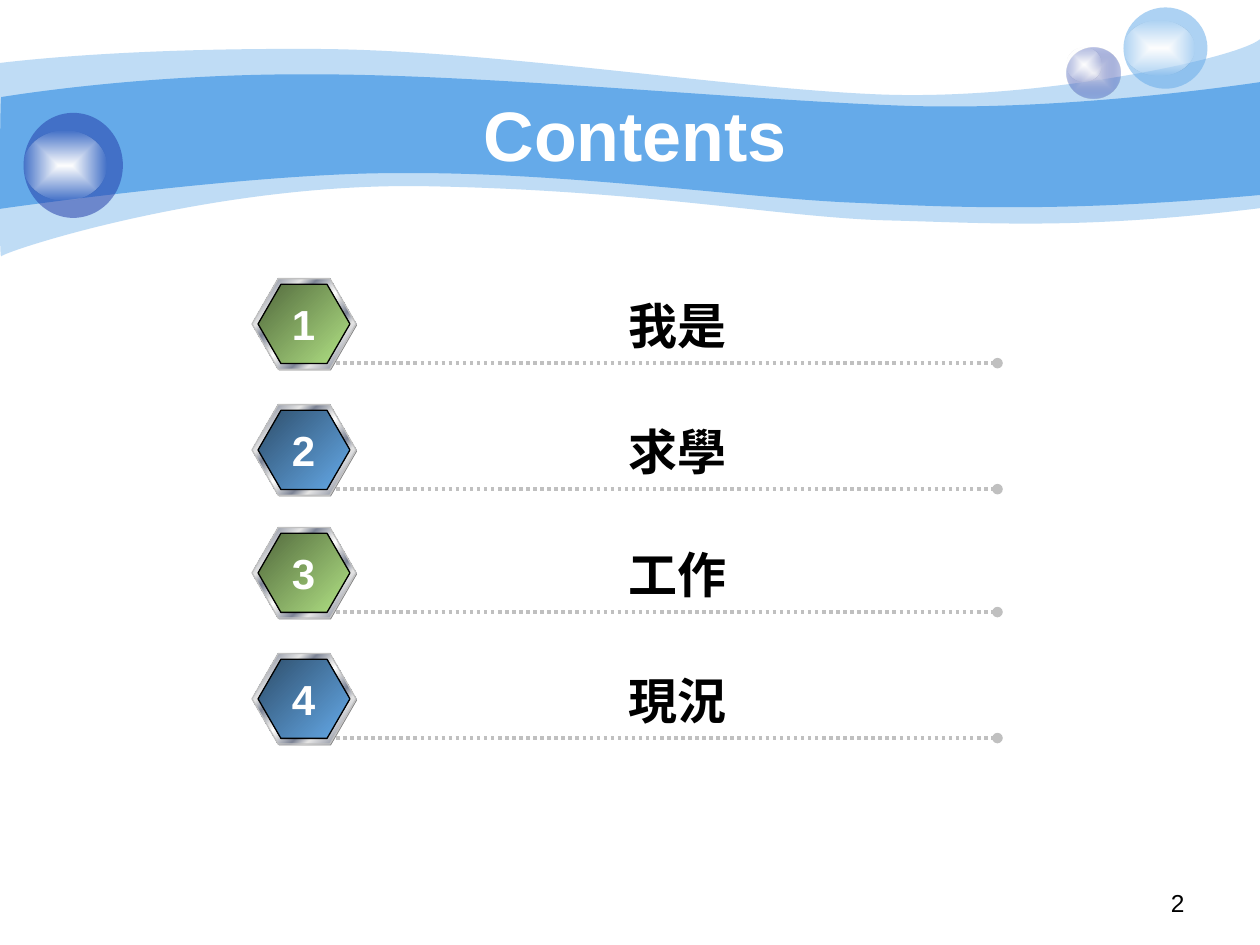
from itertools import cycle

from lxml.etree import SubElement
from pptx import Presentation
from pptx.dml.color import RGBColor
from pptx.enum.dml import MSO_LINE_DASH_STYLE as Dash
from pptx.enum.shapes import MSO_CONNECTOR as Connector, MSO_SHAPE as Shape
from pptx.enum.text import MSO_ANCHOR as Anchor, MSO_AUTO_SIZE as AutoSize, PP_ALIGN as Align
from pptx.oxml.ns import qn
from pptx.util import Pt

COLORS = {
    "sky": "65AAE9", "navy": "233DA9", "pearl": "E1E2ED", "white": "FFFFFF",
    "black": "000000", "gray": "808080", "silver": "C0C0C0", "light": "E6E6E6",
    "steel": "7D8496", "lime": "B2E385",
}
METAL = [(0, "light"), (7, "steel"), (26, "light"), (34, "steel"), (46, "light"),
         (50, "white"), (54, "light"), (66, "steel"), (74, "light"), (93, "steel"),
         (100, "light")]
GLOW = [(0, "white"), (100, "white", 0)]
OUTER_WAVE = [
    (0, 36), [(17, 34), (77, 27.5), (178, 28)], [(278, 28), (414, 50.5), (503, 54)],
    [(592, 57.5), (705.5, 34), (720, 22.5)], [(720, 119)],
    [(618, 131.5), (566.5, 127.5), (507.5, 126)], [(448, 124.5), (371, 109), (247, 106.5)],
    [(124, 103.5), (3, 143.5), (0.75, 146.5)], [(-0.75, 149.5), (0, 54), (0, 36)],
]
INNER_WAVE = [
    (0.75, 55.5), [(1.5, 55.5), (79, 42), (178.5, 42.5)],
    [(278, 42.5), (428.5, 57.5), (517, 60.5)], [(605.5, 63.5), (702.5, 49.5), (720, 47)],
    [(720, 111.5)], [(614, 121), (551, 119), (491, 116)],
    [(431.5, 114), (322, 98), (228, 99)], [(146, 98.5), (-1.5, 119.5), (-0.75, 119.5)],
    [(0, 119.5), (0, 55.5), (0.75, 55.5)],
]


def rgb(name):
    """Return the named colour."""
    return RGBColor.from_string(COLORS[name])


def paint(shape, color, alpha=100):
    """Fill a shape with one colour, without line or shadow."""
    shape.shadow.inherit = False
    shape.line.fill.background()
    shape.fill.solid()
    shape.fill.fore_color.rgb = rgb(color)
    if alpha < 100:
        clr = shape._element.spPr.find(qn("a:solidFill"))[0]
        SubElement(clr, qn("a:alpha"), val=str(alpha * 1000))


def shade(shape, stops, radial=False, dark_start=False):
    """Fill a shape with gradient stops, diagonal or from the centre."""
    paint(shape, "white")
    shape.fill.gradient()
    grad = shape._element.spPr.find(qn("a:gradFill"))
    for child in list(grad):
        grad.remove(child)
    stop_list = SubElement(grad, qn("a:gsLst"))
    for position, color, *alpha in stops:
        stop = SubElement(stop_list, qn("a:gs"), pos=str(position * 1000))
        clr = SubElement(stop, qn("a:srgbClr"), val=COLORS[color])
        if dark_start and position == 0:
            SubElement(clr, qn("a:gamma"))
            SubElement(clr, qn("a:shade"), val="46275")
            SubElement(clr, qn("a:invGamma"))
        if alpha:
            SubElement(clr, qn("a:alpha"), val=str(alpha[0] * 1000))
    if radial:
        route = SubElement(grad, qn("a:path"), path="shape")
        SubElement(route, qn("a:fillToRect"), l="50000", t="50000", r="50000", b="50000")
    else:
        SubElement(grad, qn("a:lin"), ang="2700000", scaled="1")


def add_shape(parent, kind, left, top, width, height):
    """Add a preset shape measured in points."""
    return parent.shapes.add_shape(kind, Pt(left), Pt(top), Pt(width), Pt(height))


def add_wave(slide, left, top, outline, alpha=100):
    """Draw a closed wave, bending its three-point steps into cubic curves."""
    start, *steps = outline
    builder = slide.shapes.build_freeform(Pt(left + start[0]), Pt(top + start[1]))
    builder.add_line_segments([(Pt(left + x), Pt(top + y)) for *_, (x, y) in steps])
    wave = builder.convert_to_shape()
    for segment, step in zip(list(wave._element.iter(qn("a:lnTo"))), steps):
        if len(step) == 3:
            segment.tag = qn("a:cubicBezTo")
            segment.remove(segment[0])
            for x, y in step:
                SubElement(segment, qn("a:pt"), x=str(Pt(left + x) - builder.shape_offset_x),
                           y=str(Pt(top + y) - builder.shape_offset_y))
    paint(wave, "sky", alpha)


def add_bubble(slide, left, top, width, height, glow, color=None):
    """Draw a bubble with a highlight; no colour gives the pearl gradient."""
    bubble = slide.shapes.add_group_shape()
    ball = add_shape(bubble, Shape.OVAL, left, top, width, height)
    if color:
        paint(ball, color, 53)
    else:
        shade(ball, [(0, "pearl"), (100, "navy", 31)], radial=True)
    down, glow_width, glow_height = glow
    shine = add_shape(bubble, Shape.OVAL, left, top + down, glow_width, glow_height)
    shade(shine, GLOW, radial=True)


def add_banner(slide, left, top):
    """Draw the waves and bubbles behind the title."""
    add_wave(slide, left, top, OUTER_WAVE, 41)
    add_wave(slide, left, top, INNER_WAVE)
    add_bubble(slide, left + 609.5, top + 27, 31, 29.25, (0, 20, 19.5))
    add_bubble(slide, left + 642, top + 4.25, 48, 46.5, (7.75, 40.5, 31), "sky")
    add_bubble(slide, left + 13.5, top + 64.5, 56.75, 60, (10, 47.5, 40), "navy")


def write(frame, text, size, color, font="Arial", bold=True, align=Align.CENTER):
    """Write one formatted paragraph."""
    line = frame.paragraphs[0]
    line.text = text
    line.alignment = align
    line.font.size, line.font.bold, line.font.name = Pt(size), bold, font
    line.font.color.rgb = rgb(color)
    SubElement(line._p.pPr.find(qn("a:defRPr")), qn("a:ea"), typeface=font)


def add_text(slide, left, top, width, height, wrap, *args, grow=True, **style):
    """Add a text box with one paragraph."""
    frame = slide.shapes.add_textbox(Pt(left), Pt(top), Pt(width), Pt(height)).text_frame
    frame.word_wrap = wrap
    frame.auto_size = AutoSize.SHAPE_TO_FIT_TEXT if grow else AutoSize.NONE
    write(frame, *args, **style)


def add_title(slide, left, top, width, height, text):
    """Place the slide title in front of the banner."""
    title = slide.shapes.title
    slide.shapes._spTree.append(title._element)
    title.left, title.top, title.width, title.height = map(Pt, (left, top, width, height))
    title.text_frame.vertical_anchor = Anchor.MIDDLE
    write(title.text_frame, text, 40, "white")


def add_hexagon(parent, left, top, width, height):
    """Add a hexagon with evenly slanted sides."""
    hexagon = add_shape(parent, Shape.HEXAGON, left, top, width, height)
    hexagon.adjustments[0] = 0.289
    return hexagon


def add_badge(slide, left, top, color):
    """Draw a metal-rimmed hexagon."""
    badge = slide.shapes.add_group_shape()
    paint(add_hexagon(badge, left + 0.5, top + 0.75, 59.5, 51.75), "gray")
    rim = add_hexagon(badge, left, top, 59.5, 51.75)
    face = add_hexagon(badge, left + 3.5, top + 3.25, 52.5, 45.25)
    shade(rim, METAL)
    shade(face, [(0, color), (100, color)], dark_start=True)
    for part, edge in ((rim, "silver"), (face, "black")):
        part.line.color.rgb = rgb(edge)
        part.line.width = Pt(0.75)


def add_entry(slide, left, top, number, topic, color):
    """Draw one contents row: numbered badge, dotted rule and topic."""
    add_badge(slide, left, top, color)
    rule_y = Pt(top + 48.25)
    rule = slide.shapes.add_connector(
        Connector.STRAIGHT, Pt(left + 48), rule_y, Pt(left + 426), rule_y)
    rule.line.color.rgb = rgb("silver")
    rule.line.width = Pt(2)
    rule.line.dash_style = Dash.ROUND_DOT
    SubElement(rule.line._get_or_add_ln(), qn("a:tailEnd"), type="oval")
    SubElement(rule._element.spPr, qn("a:effectLst"))
    add_text(slide, left + 66, top + 6, 354, 41, True, topic, 28, "black",
             font="Noto Sans CJK SC")
    add_text(slide, left + 15.5, top + 8, 28, 36, False, str(number), 24, "white")


def main():
    """Build the contents slide."""
    deck = Presentation()
    deck.slide_width, deck.slide_height = Pt(720), Pt(540)
    slide = deck.slides.add_slide(deck.slide_layouts[5])
    add_banner(slide, 0, 0)
    add_title(slide, 72, 54, 582, 45, "Contents")
    topics = ["我是", "求學", "工作", "現況"]
    tops = [159.25, 231.25, 301.5, 373.5]
    for number, (topic, top, color) in enumerate(zip(topics, tops, cycle(["lime", "sky"])), 1):
        add_entry(slide, 144, top, number, topic, color)
    add_text(slide, 516, 504, 168, 25, True, "2", 14, "black",
             grow=False, bold=False, align=Align.RIGHT)
    deck.save("out.pptx")


if __name__ == "__main__":
    main()
